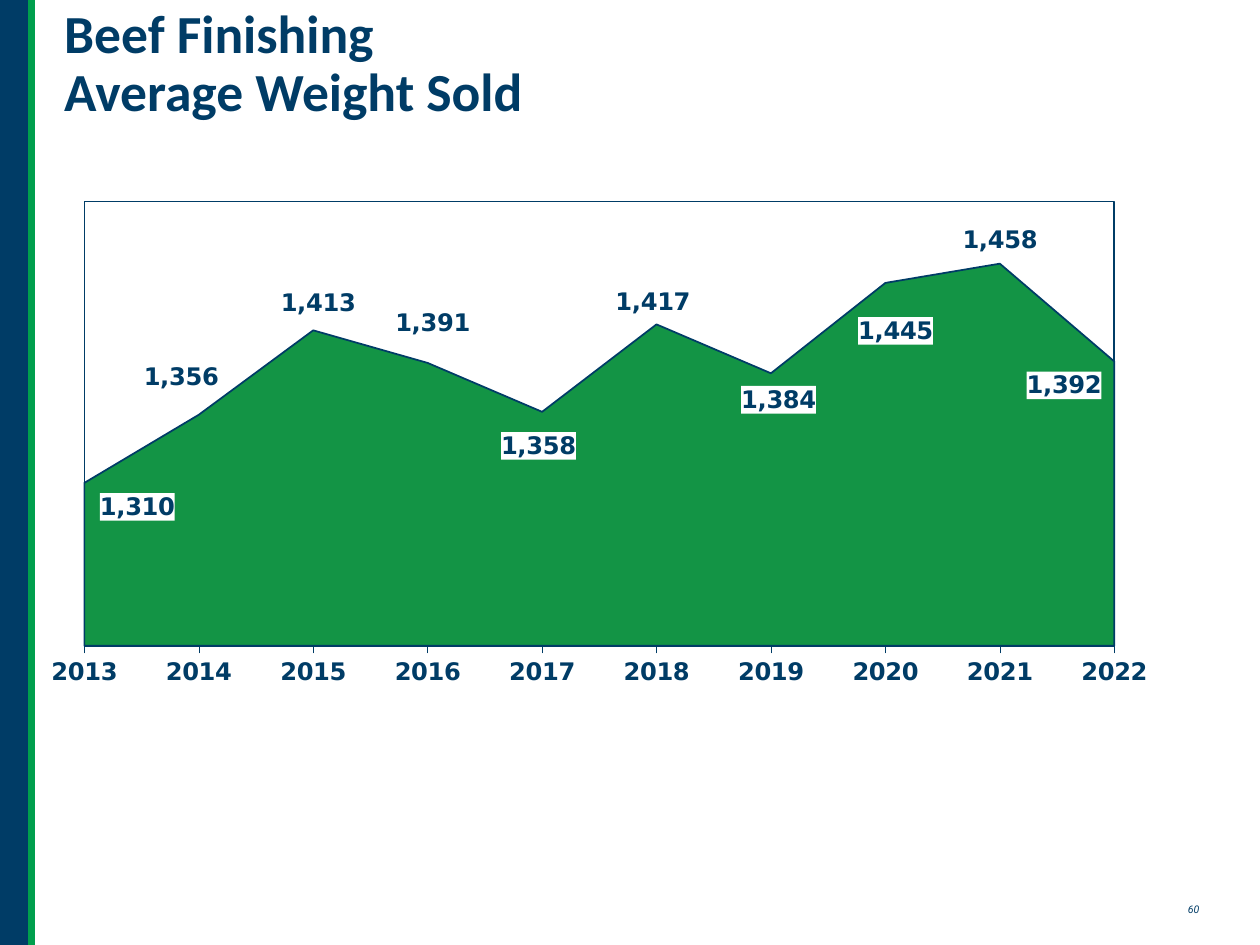
from lxml.etree import SubElement
from pptx import Presentation
from pptx.chart.data import CategoryChartData
from pptx.dml.color import RGBColor
from pptx.enum.chart import XL_CHART_TYPE, XL_TICK_LABEL_POSITION, XL_TICK_MARK
from pptx.enum.shapes import MSO_CONNECTOR, MSO_SHAPE
from pptx.enum.text import MSO_ANCHOR, PP_ALIGN
from pptx.oxml import parse_xml
from pptx.oxml.ns import nsdecls, qn
from pptx.util import Inches, Pt

NAVY, GREEN, AREA_GREEN, WHITE = "003C66", "009F4D", "139445", "FFFFFF"
CHART_WIDTH, CHART_HEIGHT = 9.92, 4.92
PLOT_LEFT, PLOT_TOP, PLOT_WIDTH, PLOT_HEIGHT = 0.127, 0.071, 0.824, 0.717
LOWEST, HIGHEST = 1200, 1500

# year, average weight, label offset from its point in inches, label on white
WEIGHTS = [
    ("2013", 1310, 0.42, 0.19, True),
    ("2014", 1356, -0.14, -0.30, False),
    ("2015", 1413, 0.04, -0.22, False),
    ("2016", 1391, 0.04, -0.32, False),
    ("2017", 1358, -0.03, 0.27, True),
    ("2018", 1417, -0.03, -0.18, False),
    ("2019", 1384, 0.06, 0.21, True),
    ("2020", 1445, 0.08, 0.38, True),
    ("2021", 1458, 0, -0.19, False),
    ("2022", 1392, -0.40, 0.19, True),
]


def color(value):
    return RGBColor.from_string(value)


def style_font(font, name, size, bold=False, italic=False):
    font.name, font.size = name, Pt(size)
    font.bold, font.italic = bold, italic
    font.color.rgb = color(NAVY)


def style_line(line, value, width):
    line.color.rgb = color(value)
    line.width = Pt(width)


def add_side_band(page):
    band = page.shapes.add_shape(MSO_SHAPE.RECTANGLE, 0, 0, Inches(0.25), Inches(7.5))
    band.shadow.inherit = False
    band.fill.solid()
    band.fill.fore_color.rgb = color(NAVY)
    band.line.fill.background()
    stripe = page.shapes.add_connector(
        MSO_CONNECTOR.STRAIGHT, Inches(0.25), Inches(-0.08), Inches(0.25), Inches(7.5))
    style_line(stripe.line, GREEN, 4.5)
    SubElement(stripe._element.spPr, qn("a:effectLst"))


def set_title(page, lines):
    title = page.shapes.title
    title.left, title.top = Inches(0.41), Inches(0.17)
    title.width, title.height = Inches(6.75), Inches(0.7)
    title.text_frame.vertical_anchor = MSO_ANCHOR.MIDDLE
    title.text_frame.word_wrap = True
    para = title.text_frame.paragraphs[0]
    para.alignment = PP_ALIGN.LEFT
    para.line_spacing = 0.9
    for number, line in enumerate(lines):
        if number:
            para.add_line_break()
        span = para.add_run()
        span.text = line
        style_font(span.font, "Calibri", 30.6, bold=True)


def add_page_number(page, number):
    box = page.shapes.add_textbox(Inches(9.33), Inches(7.12), Inches(0.33), Inches(0.2))
    box.text_frame.word_wrap = False
    span = box.text_frame.paragraphs[0].add_run()
    span.text = number
    style_font(span.font, "Roboto", 6, italic=True)


def manual_layout(x, y, extra=""):
    return parse_xml(
        f'<c:layout {nsdecls("c")}><c:manualLayout>{extra}'
        f'<c:x val="{x:.4f}"/><c:y val="{y:.4f}"/></c:manualLayout></c:layout>')


def format_plot_area(chart):
    plot_area = chart._chartSpace.chart.plotArea
    for old in plot_area.findall(qn("c:layout")):
        plot_area.remove(old)
    layout = manual_layout(
        PLOT_LEFT, PLOT_TOP,
        '<c:layoutTarget val="inner"/><c:xMode val="edge"/><c:yMode val="edge"/>')
    for name, size in (("c:w", PLOT_WIDTH), ("c:h", PLOT_HEIGHT)):
        SubElement(layout[0], qn(name)).set("val", str(size))
    plot_area.insert(0, layout)
    plot_area.append(parse_xml(
        f'<c:spPr {nsdecls("c", "a")}><a:noFill/><a:ln w="12700"><a:solidFill>'
        f'<a:srgbClr val="{NAVY}"/></a:solidFill></a:ln></c:spPr>'))


def format_axes(chart):
    years = chart.category_axis
    years.major_tick_mark = XL_TICK_MARK.OUTSIDE
    years.tick_label_position = XL_TICK_LABEL_POSITION.LOW
    years.has_major_gridlines = False
    style_font(years.tick_labels.font, "DejaVu Sans", 13.8, bold=True)
    style_line(years.format.line, NAVY, 0.25)
    values = chart.value_axis
    values.minimum_scale, values.maximum_scale = LOWEST, HIGHEST
    values.has_major_gridlines = False
    values.visible = False


def format_label(point, weight, x, y, on_white):
    style_font(point.data_label.font, "DejaVu Sans", 13.8, bold=True)
    label = point.data_label._dLbl
    # A label's default place is halfway up the area below its point
    half_height = (weight - LOWEST) / (HIGHEST - LOWEST) * PLOT_HEIGHT / 2
    parts = [
        manual_layout(x / CHART_WIDTH, y / CHART_HEIGHT - half_height),
        parse_xml(f'<c:numFmt {nsdecls("c")} formatCode="#,##0" sourceLinked="0"/>'),
    ]
    if on_white:
        parts.append(parse_xml(
            f'<c:spPr {nsdecls("c", "a")}><a:solidFill><a:srgbClr val="{WHITE}"/>'
            '</a:solidFill><a:ln><a:noFill/></a:ln></c:spPr>'))
    for old in label.findall(qn("c:spPr")):
        label.remove(old)
    for position, part in enumerate(parts, start=1):
        label.insert(position, part)


def hide_leader_lines(labels):
    element = labels._element
    for leader in element.findall(qn("c:showLeaderLines")):
        leader.set("val", "0")
    element.append(parse_xml(
        f'<c:extLst {nsdecls("c")}><c:ext uri="{{CE6537A1-D6FC-4f65-9D91-7224C49458BB}}" '
        'xmlns:c15="http://schemas.microsoft.com/office/drawing/2012/chart">'
        '<c15:showLeaderLines val="0"/></c:ext></c:extLst>'))


def add_weight_chart(page):
    data = CategoryChartData(number_format="#,##0")
    data.categories = [row[0] for row in WEIGHTS]
    data.add_series("Series 1", [row[1] for row in WEIGHTS])
    chart = page.shapes.add_chart(
        XL_CHART_TYPE.AREA_STACKED, Inches(-0.59), Inches(1.25),
        Inches(CHART_WIDTH), Inches(CHART_HEIGHT), data).chart
    chart.has_legend = False
    chart.has_title = False
    style_font(chart.font, "DejaVu Sans", 17.7, bold=True)
    format_plot_area(chart)
    format_axes(chart)

    # Filled area and its labels
    chart.plots[0].vary_by_categories = False
    series = chart.plots[0].series[0]
    series.format.fill.solid()
    series.format.fill.fore_color.rgb = color(AREA_GREEN)
    style_line(series.format.line, NAVY, 1)
    labels = series.data_labels
    labels.show_value = True
    labels.number_format, labels.number_format_is_linked = "#,##0", False
    style_font(labels.font, "DejaVu Sans", 13.8, bold=True)
    for number, (_, weight, x, y, on_white) in enumerate(WEIGHTS):
        format_label(series.points[number], weight, x, y, on_white)
    hide_leader_lines(labels)


def main():
    deck = Presentation()
    deck.slide_width, deck.slide_height = Inches(10), Inches(7.5)
    page = deck.slides.add_slide(deck.slide_layouts[5])
    add_side_band(page)
    set_title(page, ["Beef Finishing", "Average Weight Sold"])
    add_weight_chart(page)
    add_page_number(page, "60")
    deck.save("out.pptx")


if __name__ == "__main__":
    main()
